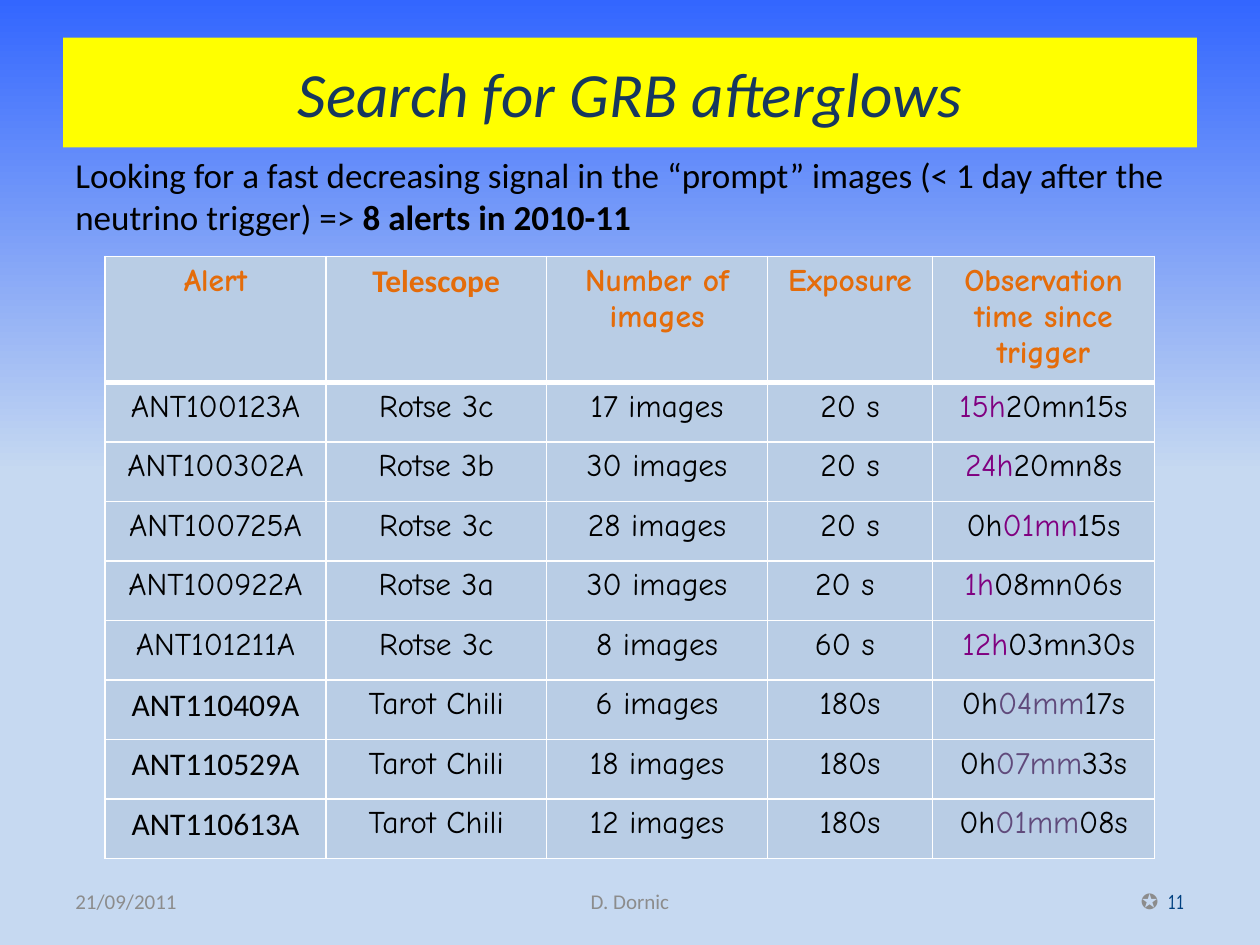
from copy import deepcopy

from lxml import etree
from pptx import Presentation
from pptx.dml.color import RGBColor
from pptx.enum.text import MSO_ANCHOR, MSO_AUTO_SIZE, PP_ALIGN
from pptx.oxml.ns import qn
from pptx.util import Cm, Pt

LEFT, CENTER, RIGHT = PP_ALIGN.LEFT, PP_ALIGN.CENTER, PP_ALIGN.RIGHT
TOP, MIDDLE = MSO_ANCHOR.TOP, MSO_ANCHOR.MIDDLE
GROW = MSO_AUTO_SIZE.SHAPE_TO_FIT_TEXT
FIXED = MSO_AUTO_SIZE.NONE

COLORS = {
    "sky": "C6D9F1", "blue": "3366FF", "yellow": "FFFF00", "navy": "17375E",
    "black": "000000", "gray": "8C8C8C", "number": "004080", "cell": "B9CDE5",
    "white": "FFFFFF", "orange": "E46C0A", "purple": "800080", "violet": "604A7B",
}
SANS, COMIC = "Calibri", "Comic Neue"

TITLE = {"name": SANS, "size": Pt(36), "italic": True, "color": "navy"}
LEAD = {"name": SANS, "size": Pt(20), "color": "black"}
FOOTER = {"name": SANS, "size": Pt(12), "color": "gray"}
PAGE_NUMBER = FOOTER | {"name": COMIC, "color": "number"}
HEADER = {"name": COMIC, "size": Pt(18), "bold": True, "color": "orange"}
BODY = HEADER | {"bold": False, "color": "black"}

HEADINGS = ["Alert", "Telescope", "Number of images", "Exposure",
            "Observation time since trigger"]
OBSERVATIONS = [
    ("ANT100123A", "Rotse 3c", "17 images", "20 s", ("", "15h", "20mn15s")),
    ("ANT100302A", "Rotse 3b", "30 images", "20 s", ("", "24h", "20mn8s")),
    ("ANT100725A", "Rotse 3c", "28 images", "20 s", ("0h", "01mn", "15s")),
    ("ANT100922A", "Rotse 3a", "30 images", "20 s ", ("", "1h", "08mn06s")),
    ("ANT101211A", "Rotse 3c", "8 images", "60 s ", ("", " 12h", "03mn30s")),
    ("ANT110409A", "Tarot Chili", "6 images", "180s", ("0h", "04mm", "17s")),
    ("ANT110529A", "Tarot Chili", "18 images", "180s", ("0h", "07mm", "33s")),
    ("ANT110613A", "Tarot Chili", "12 images", "180s", ("0h", "01mm", "08s")),
]
COLUMN_WIDTHS = [4.45, 4.45, 4.45, 3.33, 4.47]
ROW_HEIGHTS = [2.47] + [1.2] * len(OBSERVATIONS)


def rgb(color):
    return RGBColor.from_string(COLORS[color])


class SlideBuilder:
    def __init__(self, slide):
        self.slide = slide

    def background(self, stops, angle):
        fill = self.slide.background.fill
        fill.gradient()
        fill.gradient_angle = angle
        stop_list = self.slide._element.find(".//" + qn("a:gsLst"))
        while len(stop_list) < len(stops):
            stop_list.append(deepcopy(stop_list[0]))
        for stop, (position, color) in zip(fill.gradient_stops, stops):
            stop.position = position
            stop.color.rgb = rgb(color)

    def add_runs(self, frame, runs, align):
        paragraph = frame.paragraphs[0]
        paragraph.alignment = align
        for text, style in runs:
            run = paragraph.add_run()
            run.text = text
            for key, value in style.items():
                if key == "color":
                    run.font.color.rgb = rgb(value)
                else:
                    setattr(run.font, key, value)

    def title(self, text, left, top, width, height):
        heading = self.slide.shapes.title
        box = {"left": left, "top": top, "width": width, "height": height}
        for key, value in box.items():
            setattr(heading, key, Cm(value))
        heading.fill.solid()
        heading.fill.fore_color.rgb = rgb("yellow")
        heading.text_frame.vertical_anchor = MIDDLE
        heading.text_frame.auto_size = FIXED
        self.add_runs(heading.text_frame, [(text, TITLE)], CENTER)

    def text(self, runs, left, top, width, height, align=LEFT, anchor=TOP, fit=FIXED):
        frame = self.slide.shapes.add_textbox(
            Cm(left), Cm(top), Cm(width), Cm(height)).text_frame
        layout = {"word_wrap": True, "vertical_anchor": anchor, "auto_size": fit}
        for key, value in layout.items():
            setattr(frame, key, value)
        self.add_runs(frame, runs, align)

    def cell(self, cell, runs, top_width, bottom_width):
        properties = cell._tc.get_or_add_tcPr()
        borders = {"lnL": 1, "lnR": 1, "lnT": top_width, "lnB": bottom_width}
        for side, width in borders.items():
            line = etree.SubElement(properties, qn("a:" + side), w=str(Pt(width)))
            solid = etree.SubElement(line, qn("a:solidFill"))
            etree.SubElement(solid, qn("a:srgbClr"), val=COLORS["white"])
        cell.fill.solid()
        cell.fill.fore_color.rgb = rgb("cell")
        self.add_runs(cell.text_frame, runs, CENTER)

    def table(self, rows, left, top):
        table = self.slide.shapes.add_table(
            len(rows), len(COLUMN_WIDTHS), Cm(left), Cm(top),
            Cm(sum(COLUMN_WIDTHS)), Cm(sum(ROW_HEIGHTS))).table
        table.horz_banding = False
        for column, width in zip(table.columns, COLUMN_WIDTHS):
            column.width = Cm(width)
        for row, height in zip(table.rows, ROW_HEIGHTS):
            row.height = Cm(height)
        for r, row in enumerate(rows):
            for c, runs in enumerate(row):
                self.cell(table.cell(r, c), runs,
                          3 if r == 1 else 1, 3 if r == 0 else 1)


def heading_runs(heading):
    font = SANS if heading == "Telescope" else COMIC
    return [(heading, HEADER | {"name": font})]


def observation_runs(alert, telescope, images, exposure, time):
    tarot = telescope.startswith("Tarot")
    alert_style = BODY | {"name": SANS if tarot else COMIC}
    accent = BODY | {"color": "violet" if tarot else "purple"}
    time_runs = [(part, style) for part, style in zip(time, (BODY, accent, BODY)) if part]
    plain = [[(text, BODY)] for text in (telescope, images, exposure)]
    return [[(alert, alert_style)], *plain, time_runs]


def main():
    deck = Presentation()
    deck.slide_width, deck.slide_height = Cm(25.4), Cm(19.05)
    builder = SlideBuilder(deck.slides.add_slide(deck.slide_layouts[5]))

    builder.background([(0, "sky"), (0.5, "sky"), (1, "blue")], 90)
    builder.title("Search for GRB afterglows", 1.27, 0.76, 22.86, 2.21)
    lead = ("Looking for a fast decreasing signal in the “prompt” images "
            "(< 1 day after the neutrino trigger) => ")
    builder.text([(lead, LEAD), ("8 alerts in 2010-11", LEAD | {"bold": True})],
                 1.27, 2.97, 22.86, 1.96, fit=GROW)

    rows = [[heading_runs(heading) for heading in HEADINGS]]
    rows += [observation_runs(*observation) for observation in OBSERVATIONS]
    builder.table(rows, 2.12, 5.17)

    footers = [
        ([("21/09/2011", FOOTER)], 1.27, 5.93, LEFT),
        ([("D. Dornic", FOOTER)], 8.68, 8.04, CENTER),
        ([("✪  ", FOOTER), ("11", PAGE_NUMBER)], 18.2, 5.93, RIGHT),
    ]
    for runs, left, width, align in footers:
        builder.text(runs, left, 17.66, width, 1.01, align, MIDDLE)

    deck.save("out.pptx")


if __name__ == "__main__":
    main()
